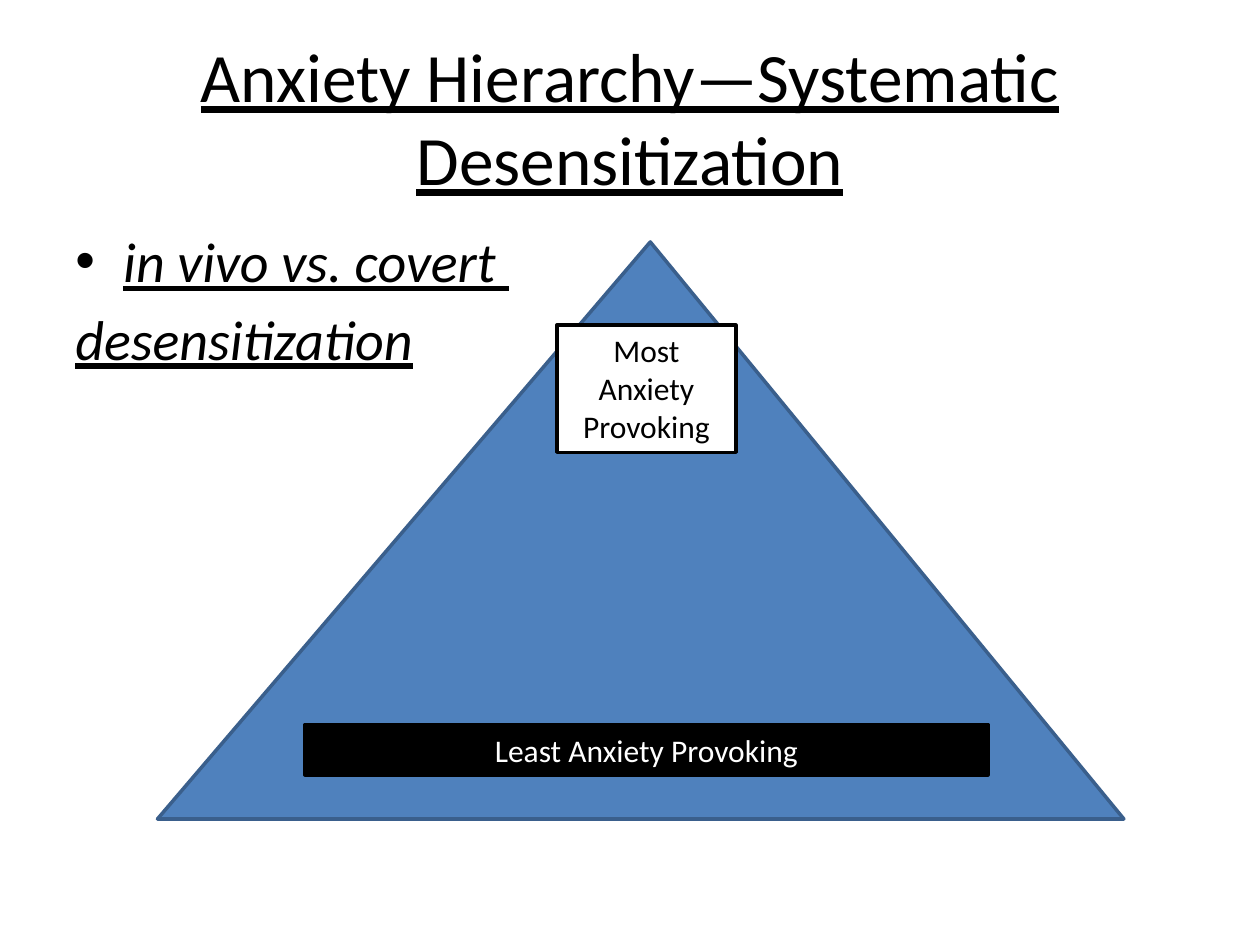
import pptx
import pptx.util
import pptx.dml.color
import pptx.enum.shapes
import pptx.enum.text
import pptx.oxml.ns
import lxml.etree

Inches = pptx.util.Inches
Pt = pptx.util.Pt
Shape = pptx.enum.shapes.MSO_SHAPE
Align = pptx.enum.text.PP_ALIGN
Anchor = pptx.enum.text.MSO_ANCHOR

COLORS = {"black": "000000", "white": "FFFFFF", "blue": "4F81BD", "edge": "3A5F8C"}


def color(name):
    return pptx.dml.color.RGBColor.from_string(COLORS[name])


class Page:
    def __init__(self, slide, face="Calibri"):
        self.slide = slide
        self.face = face

    def words(self, para, text, ink, **form):
        """Add a run of text in the page's font to a paragraph."""
        run = para.add_run()
        run.text = text
        for key, value in {"name": self.face, **form}.items():
            setattr(run.font, key, value)
        run.font.color.rgb = color(ink)

    def text(self, box, lines, anchor=Anchor.TOP, align=Align.LEFT, before=0, **form):
        """Add a text box with one paragraph per line and return the paragraphs."""
        frame = self.slide.shapes.add_textbox(*map(Inches, box)).text_frame
        frame.word_wrap = True
        frame.vertical_anchor = anchor
        for _ in lines[1:]:
            frame.add_paragraph()
        for para, line in zip(frame.paragraphs, lines):
            para.alignment = align
            para.space_before = Pt(before)
            self.words(para, line, "black", **form)
        return frame.paragraphs

    def hang(self, para, depth, mark=None):
        """Give a paragraph a hanging indent and, if asked, a bullet."""
        props = para._p.get_or_add_pPr()
        props.set("marL", str(Inches(depth)))
        props.set("indent", str(-Inches(depth)))
        if mark:
            qn = pptx.oxml.ns.qn
            lxml.etree.SubElement(props, qn("a:buFont"), typeface="Arial")
            lxml.etree.SubElement(props, qn("a:buChar"), char=mark)

    def shape(self, kind, box, fill, edge):
        shape = self.slide.shapes.add_shape(kind, *map(Inches, box))
        shape.shadow.inherit = False
        shape.fill.solid()
        shape.fill.fore_color.rgb = color(fill)
        shape.line.color.rgb = color(edge)
        shape.line.width = Pt(2)
        return shape

    def label(self, box, text, fill, ink):
        frame = self.shape(Shape.RECTANGLE, box, fill, "black").text_frame
        frame.word_wrap = True
        frame.vertical_anchor = Anchor.TOP
        para = frame.paragraphs[0]
        para.alignment = Align.CENTER
        self.words(para, text, ink, size=Pt(18))


def main():
    deck = pptx.Presentation()
    deck.slide_width, deck.slide_height = Inches(10), Inches(7.5)
    page = Page(deck.slides.add_slide(deck.slide_layouts[6]))

    page.text((0.5, 0.3, 9, 1.25), ["Anxiety Hierarchy—Systematic Desensitization"],
              anchor=Anchor.MIDDLE, align=Align.CENTER, size=Pt(39.6), underline=True)
    first, second = page.text((0.5, 1.75, 9, 4.95), ["in vivo vs. covert ", "desensitization"],
                              before=6, size=Pt(32), italic=True, underline=True)
    page.hang(first, 0.38, "•")
    page.hang(second, 0.38)

    peak = page.shape(Shape.ISOSCELES_TRIANGLE, (1.25, 1.92, 7.67, 4.58), "blue", "edge")
    peak.adjustments[0] = 0.51
    page.label((2.42, 5.75, 5.42, 0.4), "Least Anxiety Provoking", "black", "white")
    page.label((4.42, 2.58, 1.42, 1.01), "Most Anxiety Provoking", "white", "black")

    deck.save("out.pptx")


if __name__ == "__main__":
    main()
